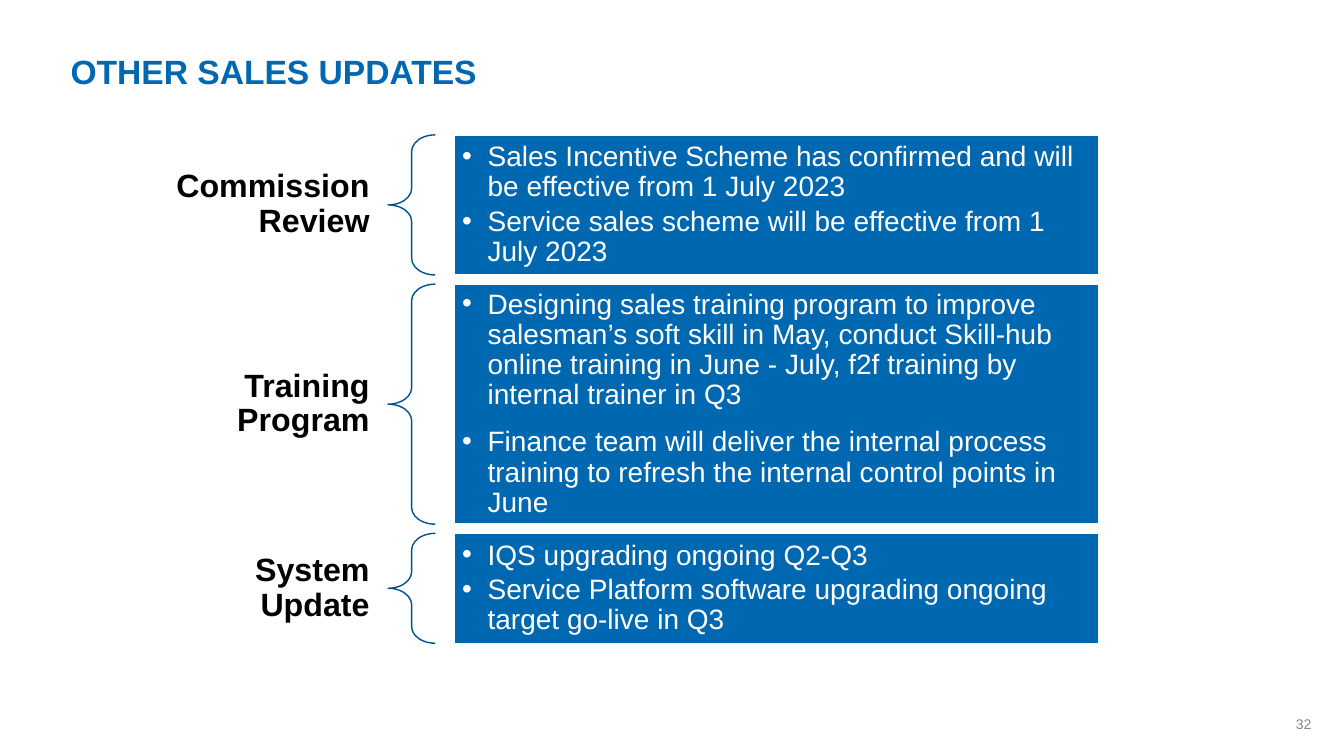
from dataclasses import dataclass

from lxml import etree
from pptx import Presentation
from pptx import util as u
from pptx.dml import color
from pptx.enum import shapes, text
from pptx.oxml import ns


@dataclass(frozen=True)
class Theme:
    """Colours and type sizes of the deck."""
    font: str = "Arial"
    blue: str = "0067B1"
    brace: str = "00528E"
    white: str = "FFFFFF"
    black: str = "000000"
    grey: str = "868686"
    title: int = 24
    label: int = 23
    body: int = 20
    number: int = 10


THEME = Theme()
UPDATES = [
    ("Commission Review", 3.53, 3, [
        "Sales Incentive Scheme has confirmed and will be effective from 1 July 2023",
        "Service sales scheme will be effective from 1 July 2023"]),
    ("Training Program", 6.05, 12, [
        "Designing sales training program to improve salesman’s soft skill in May, "
        "conduct Skill-hub online training in June - July, f2f training by "
        "internal trainer in Q3",
        "Finance team will deliver the internal process training to refresh the "
        "internal control points in June"]),
    ("System Update", 2.77, 3, [
        "IQS upgrading ongoing Q2-Q3",
        "Service Platform software upgrading ongoing target go-live in Q3"]),
]


def rgb(value):
    """Turn a hex string into a colour."""
    return color.RGBColor.from_string(value)


def add_bullet(para, indent):
    """Give a paragraph a hanging round bullet."""
    props = para._p.get_or_add_pPr()
    props.set("marL", str(u.Cm(indent)))
    props.set("indent", str(-u.Cm(indent)))
    etree.SubElement(props, ns.qn("a:buFont"), typeface=THEME.font)
    etree.SubElement(props, ns.qn("a:buChar"), char="•")


def write(shape, lines, *, size, ink, bold=False, align=text.PP_ALIGN.LEFT,
          anchor=text.MSO_ANCHOR.MIDDLE, inset=(0, 0), spacing=0.9, after=0, indent=0):
    """Fill a shape with formatted paragraphs."""
    frame = shape.text_frame
    frame.word_wrap = True
    frame.vertical_anchor = anchor
    frame.margin_left = frame.margin_right = u.Cm(inset[0])
    frame.margin_top = frame.margin_bottom = u.Cm(inset[1])
    for index, line in enumerate(lines):
        para = frame.paragraphs[0] if index == 0 else frame.add_paragraph()
        para.alignment = align
        para.line_spacing = spacing
        para.space_after = u.Pt(after)
        if indent:
            add_bullet(para, indent)
        span = para.add_run()
        span.text = line
        span.font.name = THEME.font
        span.font.size = u.Pt(size)
        span.font.bold = bold
        span.font.color.rgb = rgb(ink)


def add_text(page, box, line, **style):
    """Place one line of text in a box given in centimetres."""
    write(page.shapes.add_textbox(*map(u.Cm, box)), [line], **style)


def add_outline(page, kind, box, line):
    """Place a preset shape with a thin line and no shadow."""
    shape = page.shapes.add_shape(kind, *map(u.Cm, box))
    shape.shadow.inherit = False
    shape.line.color.rgb = rgb(line)
    shape.line.width = u.Pt(1)
    return shape


def add_update(page, box, label, after, points):
    """Place a label, its brace and its panel of bullets in one row."""
    left, top, width, height = box
    label_width, label_height, brace_width, gap = 5.97, 2, 1.19, 0.48
    add_text(page, (left, top + (height - label_height) / 2, label_width, label_height),
             label, size=THEME.label, ink=THEME.black, bold=True,
             align=text.PP_ALIGN.RIGHT, inset=(0.46, 0.15))

    brace = add_outline(page, shapes.MSO_SHAPE.LEFT_BRACE,
                        (left + label_width, top, brace_width, height), THEME.brace)
    brace.fill.background()
    brace.adjustments[0] = 0.35
    brace.adjustments[1] = 0.5

    offset = label_width + brace_width + gap
    panel = add_outline(page, shapes.MSO_SHAPE.RECTANGLE,
                        (left + offset, top, width - offset, height), THEME.white)
    panel.fill.solid()
    panel.fill.fore_color.rgb = rgb(THEME.blue)
    write(panel, points, size=THEME.body, ink=THEME.white,
          inset=(0.2, 0.2), after=after, indent=0.64)


def add_updates(page, box):
    """Stack the update rows from the top of the box."""
    left, top, width = box
    for label, height, after, points in UPDATES:
        add_update(page, (left, top, width, height), label, after, points)
        top += height + 0.23


def main():
    """Build and save the deck."""
    deck = Presentation()
    deck.slide_width, deck.slide_height = u.Cm(33.87), u.Cm(19.05)
    page = deck.slides.add_slide(deck.slide_layouts[6])
    add_text(page, (1.78, 0.89, 24.94, 1.93), "OTHER SALES UPDATES",
             size=THEME.title, ink=THEME.blue, bold=True)
    add_updates(page, (3.81, 3.4, 23.88))
    add_text(page, (32.36, 17.98, 0.69, 0.48), "32", size=THEME.number, ink=THEME.grey,
             align=text.PP_ALIGN.RIGHT, anchor=text.MSO_ANCHOR.BOTTOM, spacing=1.0)
    deck.save("out.pptx")


if __name__ == "__main__":
    main()
